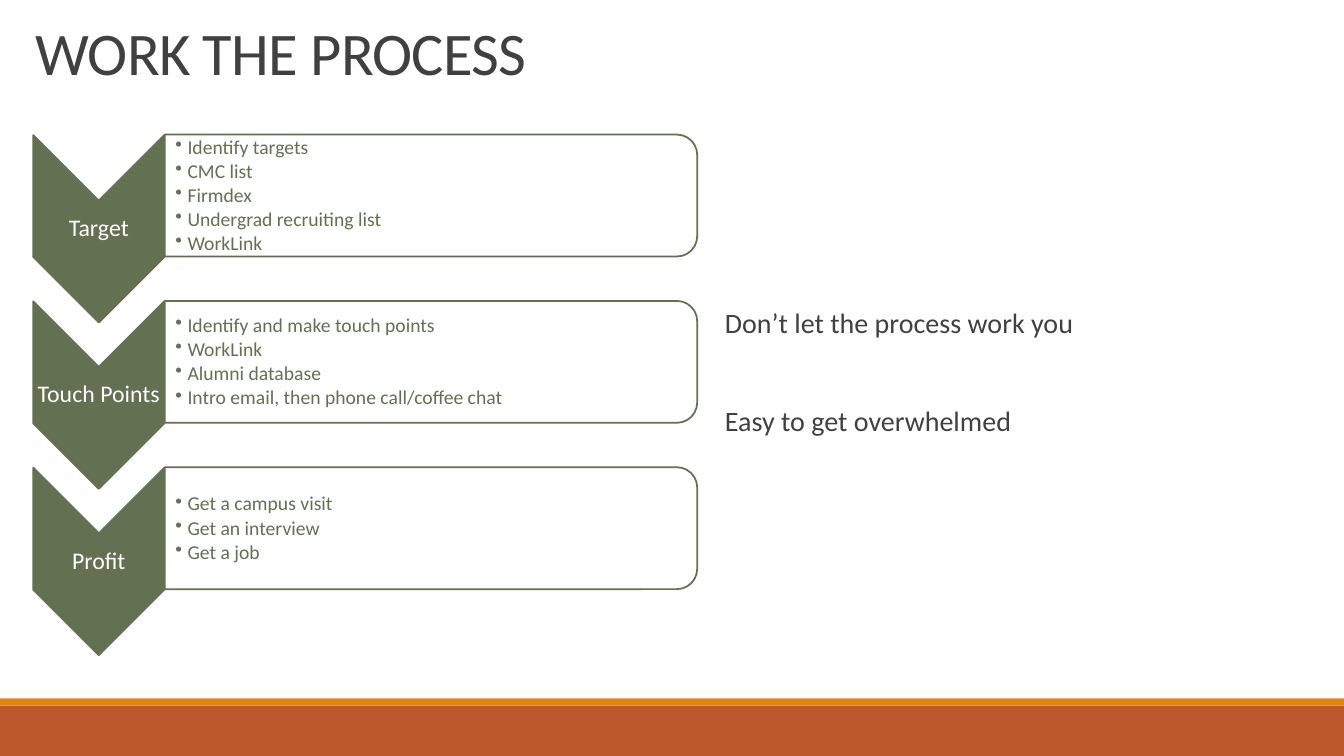
from lxml.etree import SubElement
from pptx import Presentation
from pptx.dml.color import RGBColor
from pptx.enum.shapes import MSO_SHAPE
from pptx.enum.text import MSO_ANCHOR, MSO_AUTO_SIZE, PP_ALIGN
from pptx.oxml.ns import qn
from pptx.util import Inches, Pt

GREEN, DARK, WHITE = "637052", "404040", "FFFFFF"
RUST, AMBER = "BD582C", "E48312"


def color(code):
    return RGBColor.from_string(code)


class Page:
    font = "Calibri"

    def __init__(self, deck):
        self.slide = deck.slides.add_slide(deck.slide_layouts[1])
        self.shapes = self.slide.shapes

    def place(self, item, box):
        item.left, item.top, item.width, item.height = map(Inches, box)

    def shape(self, kind, box, fill, line=None, turn=0, alpha=None):
        item = self.shapes.add_shape(kind, *map(Inches, box))
        item.shadow.inherit = False
        item.rotation = turn
        item.fill.solid()
        item.fill.fore_color.rgb = color(fill)
        if alpha:
            tint = item._element.spPr.find(qn("a:solidFill"))[0]
            SubElement(tint, qn("a:alpha")).set("val", str(alpha * 1000))
        if line:
            item.line.color.rgb = color(line)
            item.line.width = Pt(1.25)
        else:
            item.line.fill.background()

    def frame(self, item, pads, anchor=MSO_ANCHOR.MIDDLE):
        frame = item.text_frame
        frame.word_wrap = True
        frame.auto_size = MSO_AUTO_SIZE.NONE
        frame.vertical_anchor = anchor
        (frame.margin_left, frame.margin_top,
         frame.margin_right, frame.margin_bottom) = map(Inches, pads)
        return frame

    def words(self, frame, lines, size, ink, align=PP_ALIGN.LEFT,
              lead=0.9, before=0, after=0, indent=0, bullet=None):
        for i, line in enumerate(lines):
            para = frame.paragraphs[0] if i == 0 else frame.add_paragraph()
            para.alignment = align
            para.line_spacing = lead
            para.space_before = Pt(before if i else 0)
            para.space_after = Pt(after)
            props = para._p.get_or_add_pPr()
            props.set("marL", str(Inches(indent)))
            props.set("indent", str(Inches(-indent if bullet else 0)))
            if bullet:
                SubElement(props, qn("a:buChar")).set("char", bullet)
            else:
                SubElement(props, qn("a:buNone"))
            run = para.add_run()
            run.text = line
            run.font.name = self.font
            run.font.size = Pt(size)
            run.font.color.rgb = color(ink)

    def title(self, line, box):
        item = self.shapes.title
        self.place(item, box)
        frame = self.frame(item, (0.1, 0.05, 0.1, 0.05), MSO_ANCHOR.BOTTOM)
        self.words(frame, [line], 43.2, DARK, lead=0.85)
        run = frame.paragraphs[0].runs[0]
        run._r.get_or_add_rPr().set("spc", "-50")

    def body(self, lines, box):
        item = self.slide.placeholders[1]
        self.place(item, box)
        frame = self.frame(item, (0, 0.05, 0, 0.05))
        self.words(frame, lines, 20, DARK, before=47, after=2, indent=0.1)

    def text(self, lines, box, pad, size, ink, **style):
        item = self.shapes.add_textbox(*map(Inches, box))
        frame = self.frame(item, (pad, 0.01, 0.01, 0.01))
        self.words(frame, lines, size, ink, **style)

    def step(self, top, name, lines):
        self.shape(MSO_SHAPE.CHEVRON, (0.05, top + 0.28, 1.86, 1.3),
                   GREEN, GREEN, 90)
        self.text([name], (0.33, top + 0.65, 1.3, 0.56), 0.01, 17, WHITE,
                  align=PP_ALIGN.CENTER)
        self.shape(MSO_SHAPE.ROUND_2_SAME_RECTANGLE,
                   (3.67, top - 2.04, 1.21, 5.28), WHITE, GREEN, 90, 90)
        self.text(lines, (1.63, top + 0.06, 5.22, 1.09), 0.11, 14, GREEN,
                  after=2.1, indent=0.12, bullet="•")


def main():
    deck = Presentation()
    deck.slide_width, deck.slide_height = Inches(13.33), Inches(7.5)
    page = Page(deck)
    page.shape(MSO_SHAPE.RECTANGLE, (0, 7, 13.33, 0.5), RUST)
    page.shape(MSO_SHAPE.RECTANGLE, (0, 6.93, 13.33, 0.07), AMBER)
    page.title("WORK THE PROCESS", (0.25, 0.17, 11.77, 0.75))
    page.body(["Don’t let the process work you", "Easy to get overwhelmed"],
              (7.09, 1.17, 6.08, 5.07))
    steps = [
        ("Target", ["Identify targets", "CMC list", "Firmdex",
                    "Undergrad recruiting list", "WorkLink"]),
        ("Touch Points", ["Identify and make touch points", "WorkLink",
                          "Alumni database",
                          "Intro email, then phone call/coffee chat"]),
        ("Profit", ["Get a campus visit", "Get an interview", "Get a job"]),
    ]
    for i, (name, lines) in enumerate(steps):
        page.step(1.34 + 1.65 * i, name, lines)
    deck.save("out.pptx")


if __name__ == "__main__":
    main()
